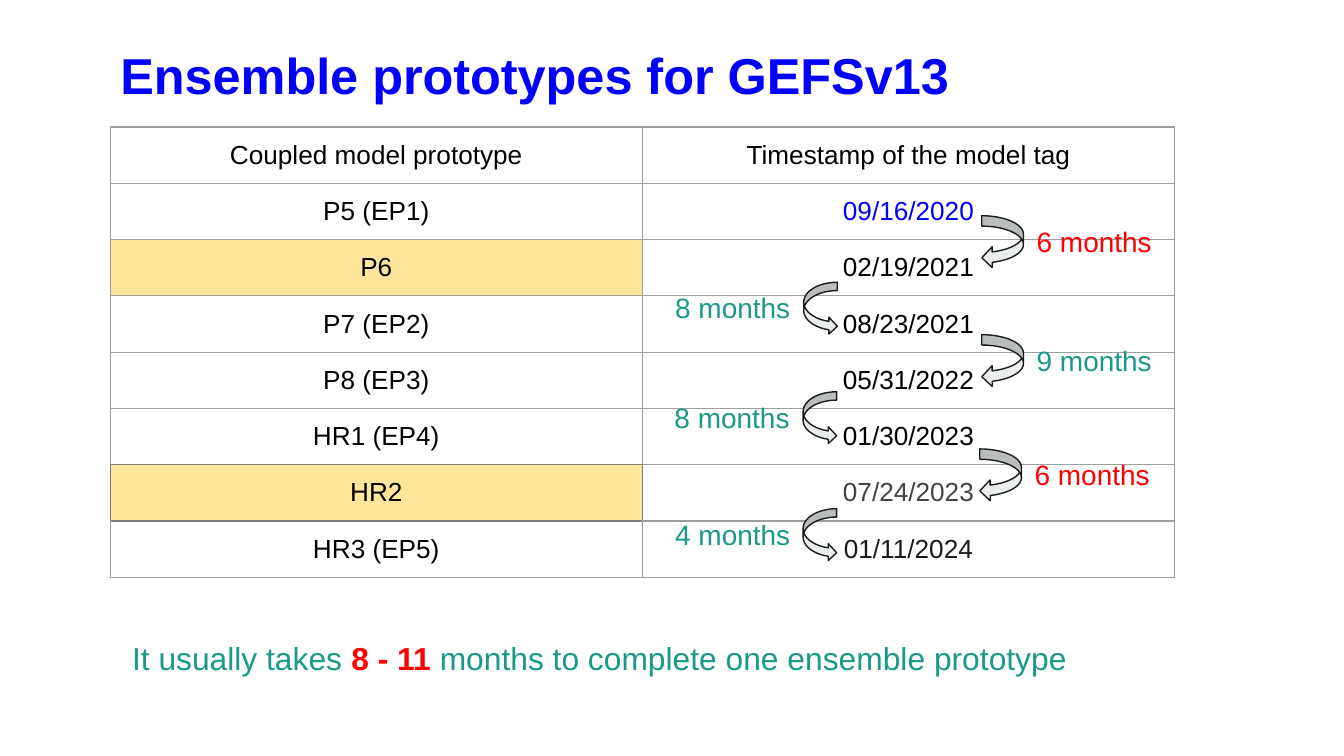
import pptx
import pptx.dml.color
import pptx.enum.shapes
import pptx.enum.text
import pptx.oxml
import pptx.oxml.ns
import pptx.util
from lxml import etree

RGBColor = pptx.dml.color.RGBColor
BLACK = RGBColor(0x00, 0x00, 0x00)
BLUE = RGBColor(0x00, 0x00, 0xFF)
RED = RGBColor(0xFF, 0x00, 0x00)
TEAL = RGBColor(0x1A, 0x99, 0x88)
YELLOW = RGBColor(0xFF, 0xE5, 0x99)
PALE = RGBColor(0xE9, 0xED, 0xEE)
INK = RGBColor(0x1A, 0x1A, 0x1A)
DARK_GRAY = RGBColor(0x43, 0x43, 0x43)
BORDER = RGBColor(0x9E, 0x9E, 0x9E)
DARK_BORDER = RGBColor(0x7F, 0x7F, 0x7F)
PX = 4572
SIDES = ("L", "R", "T", "B")


def write(frame, text, size, color, bold=False, align=pptx.enum.text.PP_ALIGN.LEFT, inset=20):
    frame.word_wrap = True
    frame.margin_left = frame.margin_right = inset * PX
    frame.margin_top = frame.margin_bottom = inset * PX
    para = frame.paragraphs[0]
    para.alignment = align
    span = para.add_run()
    span.text = text
    span.font.name = "Arial"
    span.font.size = pptx.util.Pt(size)
    span.font.bold = bold
    span.font.color.rgb = color


def set_borders(cell, colors):
    properties = cell._tc.get_or_add_tcPr()
    for index, side in enumerate(SIDES):
        line = etree.Element(pptx.oxml.ns.qn(f"a:ln{side}"), w=str(pptx.util.Pt(0.75)))
        fill = etree.SubElement(line, pptx.oxml.ns.qn("a:solidFill"))
        etree.SubElement(fill, pptx.oxml.ns.qn("a:srgbClr"), val=str(colors.get(side, BORDER)))
        properties.insert(index, line)


deck = pptx.Presentation()
deck.slide_width = 2000 * PX
deck.slide_height = 1125 * PX
page = deck.slides.add_slide(deck.slide_layouts[5])

title = page.shapes.title
title.left, title.top, title.width, title.height = 165 * PX, 46 * PX, 1736 * PX, 130 * PX
title.text_frame.vertical_anchor = pptx.enum.text.MSO_ANCHOR.MIDDLE
write(title.text_frame, "Ensemble prototypes for GEFSv13", 27, BLUE, bold=True, inset=14)

prototypes = [
    ("Coupled model prototype", "Timestamp of the model tag", BLACK),
    ("P5 (EP1)", "09/16/2020", BLUE),
    ("P6", "02/19/2021", BLACK),
    ("P7 (EP2)", "08/23/2021", BLACK),
    ("P8 (EP3)", "05/31/2022", BLACK),
    ("HR1 (EP4)", "01/30/2023", BLACK),
    ("HR2", "07/24/2023", DARK_GRAY),
    ("HR3 (EP5)", "01/11/2024", INK),
]
dark_sides = {
    (5, 0): "B",
    (6, 0): "LRTB",
    (6, 1): "L",
    (7, 0): "T",
}
table = page.shapes.add_table(
    len(prototypes), 2, 164 * PX, 189 * PX, 1584 * PX, 82 * len(prototypes) * PX
).table
table.first_row = False
table.horz_banding = False
for row, (name, date, date_color) in enumerate(prototypes):
    for column, (text, color) in enumerate([(name, BLACK), (date, date_color)]):
        cell = table.cell(row, column)
        write(cell.text_frame, text, 14, color, align=pptx.enum.text.PP_ALIGN.CENTER)
        cell.margin_left = cell.margin_right = 20 * PX
        cell.margin_top = cell.margin_bottom = 20 * PX
        if column == 0 and name in ("P6", "HR2"):
            cell.fill.solid()
            cell.fill.fore_color.rgb = YELLOW
        else:
            cell.fill.background()
        set_borders(cell, {side: DARK_BORDER for side in dark_sides.get((row, column), "")})

summary = page.shapes.add_textbox(177 * PX, 931 * PX, 1632 * PX, 98 * PX)
for text, color, bold in [
    ("It usually takes ", TEAL, False),
    ("8 - 11 ", RED, True),
    ("months to complete one ensemble prototype", TEAL, False),
]:
    write(summary.text_frame, text, 17, color, bold=bold)

LEFT_ARROW = pptx.enum.shapes.MSO_SHAPE.CURVED_LEFT_ARROW
RIGHT_ARROW = pptx.enum.shapes.MSO_SHAPE.CURVED_RIGHT_ARROW
intervals = [
    (LEFT_ARROW, 1461, 321, 62, 1523, "6 months", RED),
    (RIGHT_ARROW, 1196, 420, 50, 985, "8 months", TEAL),
    (LEFT_ARROW, 1461, 498, 62, 1523, "9 months", TEAL),
    (RIGHT_ARROW, 1195, 583, 50, 984, "8 months", TEAL),
    (RIGHT_ARROW, 1195, 757, 50, 985, "4 months", TEAL),
    (LEFT_ARROW, 1458, 668, 62, 1520, "6 months", RED),
]
for kind, left, top, width, label_left, text, color in intervals:
    arrow = page.shapes.add_shape(kind, left * PX, top * PX, width * PX, 78 * PX)
    arrow.shadow.inherit = False
    arrow.fill.solid()
    arrow.fill.fore_color.rgb = PALE
    arrow.line.color.rgb = INK
    arrow.line.width = pptx.util.Pt(0.75)
    label = page.shapes.add_textbox(label_left * PX, (top - 7) * PX, 228 * PX, 90 * PX)
    write(label.text_frame, text, 15, color)

deck.save("out.pptx")
